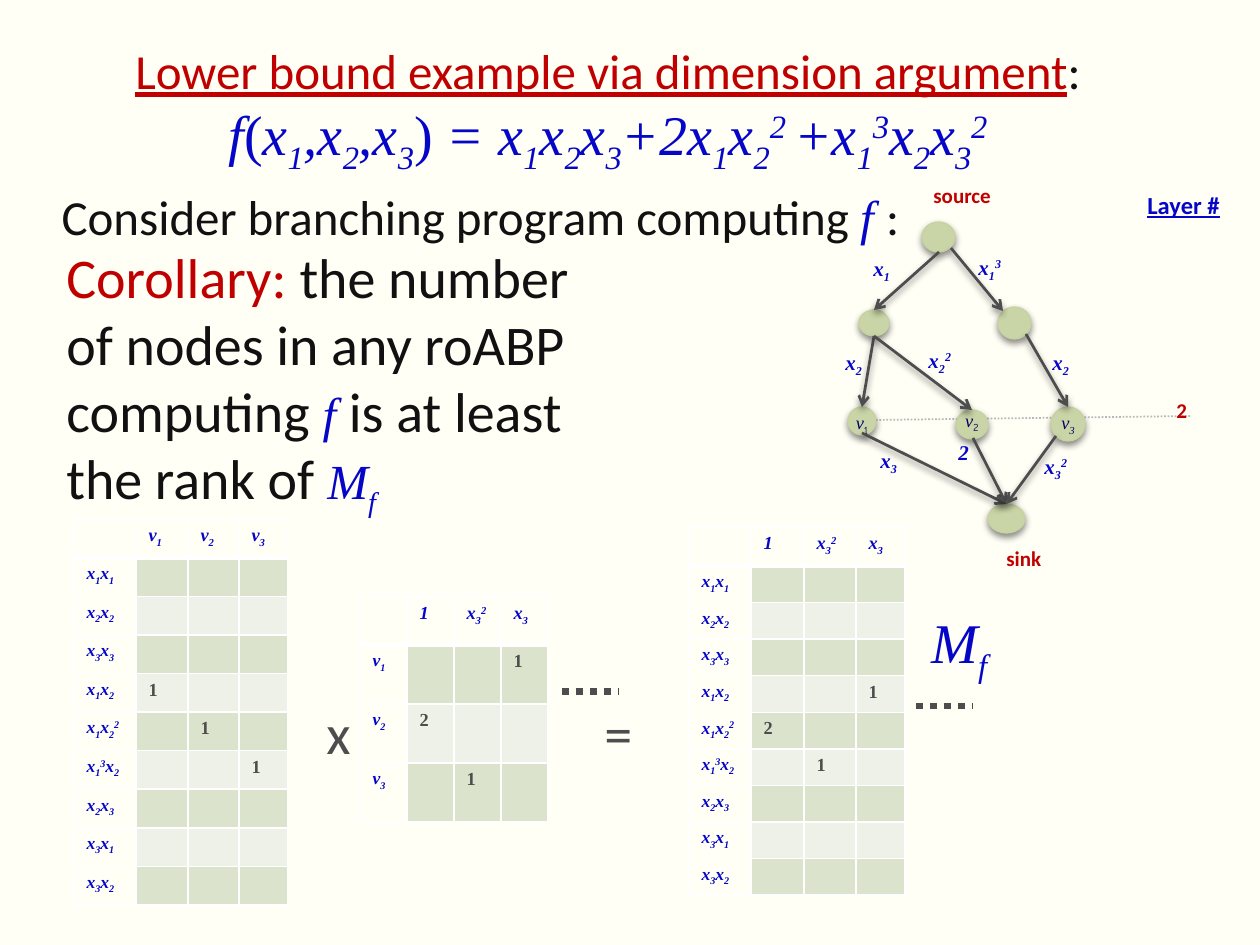
"""Build the slide on a lower bound for read-once branching programs."""
from dataclasses import dataclass, field
from itertools import groupby

from lxml.etree import SubElement
from pptx import Presentation
from pptx.dml.color import RGBColor
from pptx.enum.dml import MSO_LINE
from pptx.enum.shapes import MSO_CONNECTOR, MSO_SHAPE
from pptx.enum.text import MSO_ANCHOR, MSO_AUTO_SIZE, PP_ALIGN
from pptx.oxml.ns import qn
from pptx.util import Emu, Pt

SCALE = 914400 / 126
SERIF, SANS = "Times New Roman", "Calibri"
RED, BLUE, INK, GREY, NAVY = "C00000", "0606C8", "111111", "4D4D4D", "000066"


def px(length):
    return Emu(round(length * SCALE))


def style(name, size, color, **flags):
    return {"color": color, "format": {"name": name, "size": Pt(size), **flags}}


@dataclass
class Theme:
    background: str = "FFFFF6"
    node_fill: str = "C9D5A7"
    node_line: str = "C6D2A1"
    guide: str = "B8B8B8"
    border: str = "FFFFFF"
    bands: tuple = ("DBE3CD", "EEF1E8")
    styles: dict = field(default_factory=lambda: {
        "heading": style(SANS, 28, RED, underline=True),
        "body": style(SANS, 28, INK),
        "large": style(SANS, 32, INK),
        "large red": style(SANS, 32, RED),
        "operator": style(SANS, 32, GREY),
        "formula": style(SERIF, 32, BLUE, italic=True),
        "bracket": style(SERIF, 32, BLUE),
        "symbol": style(SERIF, 28, BLUE, italic=True),
        "end": style(SANS, 12, RED, bold=True),
        "layer": style(SANS, 14, BLUE, bold=True, underline=True),
        "weight": style(SERIF, 12, BLUE, bold=True, italic=True),
        "node": style(SERIF, 10.5, NAVY, italic=True),
        "node index": style("Comic Neue", 10.5, NAVY),
        "column": style(SERIF, 10.5, BLUE, bold=True, italic=True),
        "row": style(SERIF, 10, BLUE, bold=True, italic=True),
        "entry": style(SERIF, 10.5, GREY, bold=True),
    })


def split_scripts(markup):
    levels, level = {"_": -25000, "^": 30000}, 0
    letters = []
    for letter in markup:
        if letter in levels:
            level = levels[letter]
        else:
            letters.append((letter, level))
            level = 0
    for level, group in groupby(letters, key=lambda pair: pair[1]):
        yield "".join(letter for letter, _ in group), level


class SlideBuilder:
    def __init__(self, slide, theme):
        self.slide, self.theme = slide, theme
        slide.background.fill.solid()
        slide.background.fill.fore_color.rgb = RGBColor.from_string(theme.background)

    def add_runs(self, paragraph, pieces):
        for style_name, markup in pieces:
            look = self.theme.styles[style_name]
            for text, baseline in split_scripts(markup):
                run = paragraph.add_run()
                run.text = text
                for attribute, value in look["format"].items():
                    setattr(run.font, attribute, value)
                run.font.color.rgb = RGBColor.from_string(look["color"])
                if baseline:
                    run.font._element.set("baseline", str(baseline))

    def shadow(self, shape):
        effects = SubElement(shape._element.spPr, qn("a:effectLst"))
        outer = SubElement(effects, qn("a:outerShdw"), blurRad=str(Pt(4)), dist=str(Pt(2)),
                           dir="5400000", rotWithShape="0")
        black = SubElement(outer, qn("a:srgbClr"), val="000000")
        SubElement(black, qn("a:alpha"), val="45000")

    def body(self, box, paragraphs):
        holder = self.slide.placeholders[1]
        holder.left, holder.top, holder.width, holder.height = map(px, box)
        frame = holder.text_frame
        frame.auto_size, frame.vertical_anchor = MSO_AUTO_SIZE.NONE, MSO_ANCHOR.TOP
        for number, (align, pieces) in enumerate(paragraphs):
            paragraph = frame.add_paragraph() if number else frame.paragraphs[0]
            properties = paragraph._p.get_or_add_pPr()
            properties.set("marL", "0")
            properties.set("indent", "0")
            SubElement(properties, qn("a:buNone"))
            paragraph.alignment = align
            paragraph.space_before = Pt(6 if number else 0)
            self.add_runs(paragraph, pieces)

    def text(self, box, *pieces):
        frame = self.slide.shapes.add_textbox(*map(px, box)).text_frame
        frame.word_wrap, frame.auto_size = True, MSO_AUTO_SIZE.SHAPE_TO_FIT_TEXT
        self.add_runs(frame.paragraphs[0], pieces)

    def node(self, box, pieces=(), anchor=MSO_ANCHOR.MIDDLE, bottom=0):
        node = self.slide.shapes.add_shape(MSO_SHAPE.OVAL, *map(px, box))
        node.fill.solid()
        node.fill.fore_color.rgb = RGBColor.from_string(self.theme.node_fill)
        node.line.color.rgb = RGBColor.from_string(self.theme.node_line)
        node.line.width = Pt(0.75)
        self.shadow(node)
        layout = {"margin_left": 0, "margin_right": 0, "margin_top": 0,
                  "margin_bottom": px(bottom), "vertical_anchor": anchor, "word_wrap": False}
        for attribute, value in layout.items():
            setattr(node.text_frame, attribute, value)
        label = node.text_frame.paragraphs[0]
        label.alignment = PP_ALIGN.CENTER
        self.add_runs(label, pieces)
        return node

    def line(self, start, end, color, width, dash=None):
        line = self.slide.shapes.add_connector(MSO_CONNECTOR.STRAIGHT, *map(px, start + end))
        line.line.color.rgb = RGBColor.from_string(color)
        line.line.width = Pt(width)
        if dash:
            line.line.dash_style = dash
            SubElement(line._element.spPr, qn("a:effectLst"))
        return line

    def arrow(self, head, tail):
        arrow = self.line(head, tail, GREY, 1.57)
        SubElement(arrow.line._get_or_add_ln(), qn("a:headEnd"), type="arrow")
        self.shadow(arrow)
        return arrow

    def borders(self, cell, is_header):
        for side in "LRTB":
            width = 3 if is_header and side == "B" else 1
            edge = SubElement(cell._tc.get_or_add_tcPr(), qn(f"a:ln{side}"), w=str(Pt(width)))
            fill = SubElement(edge, qn("a:solidFill"))
            SubElement(fill, qn("a:srgbClr"), val=self.theme.border)

    def matrix(self, box, header, widths, columns, rows, entries):
        table = self.slide.shapes.add_table(len(rows) + 1, len(columns) + 1, *map(px, box)).table
        table.first_row = table.horz_banding = False
        for column, width in zip(table.columns, widths):
            column.width = px(width)
        for number, row in enumerate(table.rows):
            row.height = px((box[3] - header) / len(rows) if number else header)
            for place, cell in enumerate(row.cells):
                self.borders(cell, number == 0)
                if number and place:
                    cell.fill.solid()
                    band = self.theme.bands[(number - 1) % 2]
                    cell.fill.fore_color.rgb = RGBColor.from_string(band)
                    look, value = "entry", entries.get((rows[number - 1], columns[place - 1]), "")
                else:
                    cell.fill.background()
                    look, value = ("row", rows[number - 1]) if number else ("column", ("", *columns)[place])
                paragraph = cell.text_frame.paragraphs[0]
                self.add_runs(paragraph, [(look, value)])
                if not value:
                    SubElement(paragraph._p, qn("a:endParaRPr"), sz="1000")


def main():
    deck = Presentation()
    deck.slide_width, deck.slide_height = px(1260), px(945)
    slide = deck.slides.add_slide(deck.slide_layouts[1])
    title = slide.shapes.title._element
    title.getparent().remove(title)
    builder = SlideBuilder(slide, Theme())

    builder.body((49, 34, 1118, 328), [
        (PP_ALIGN.CENTER, [
            ("heading", "Lower bound example via dimension argument"), ("body", ": "),
            ("formula", "f"), ("bracket", "("), ("formula", "x_1,x_2,x_3"), ("bracket", ")"),
            ("formula", " = x_1x_2x_3+2x_1x_2^2^ +x_1^3x_2x_3^2")]),
        (PP_ALIGN.LEFT, [("body", "Consider branching program computing "),
                         ("symbol", "f "), ("body", ":")]),
    ])

    builder.line((876, 420), (1191, 416), builder.theme.guide, 1, MSO_LINE.ROUND_DOT)
    builder.node((922, 222, 33, 30))
    left = builder.node((859, 310, 30, 26))
    builder.node((998, 307, 33, 32))
    v1 = builder.node((848, 407, 28, 28), [("node", "v"), ("node index", "_1")], MSO_ANCHOR.TOP)
    v2 = builder.node((956, 410, 32, 29), [("node", "v"), ("node index", "_2")], bottom=6)
    v3 = builder.node((1051, 407, 34, 34), [("node", "v_3")])
    sink = builder.node((988, 504, 37, 29))
    builder.arrow((1003, 311), (951, 248))
    for child, tail in ((left, (939, 252)), (v1, (874, 336)), (v2, (874, 336)),
                        (v3, (1026, 334)), (sink, (862, 433)), (sink, (973, 438)),
                        (sink, (1056, 436))):
        builder.arrow(tail, tail).begin_connect(child, 0)

    for x, y, weight in ((861, 249, "x_1"), (966, 248, "x_1^3"), (833, 343, "x_2"),
                         (916, 341, "x_2^2"), (1040, 343, "x_2"), (868, 441, "x_3"),
                         (946, 433, "2"), (1032, 447, "x_3^2")):
        builder.text((x, y, 57, 38), ("weight", weight))
    for x, y, look, label in ((921, 176, "end", "source"), (994, 539, "end", "sink"),
                              (1164, 391, "end", "2"), (1135, 184, "layer", "Layer #")):
        builder.text((x, y, 108, 38), (look, label))

    monomials = ("x_1x_1", "x_2x_2", "x_3x_3", "x_1x_2", "x_1x_2^2", "x_1^3x_2",
                 "x_2x_3", "x_3x_1", "x_3x_2")
    vertices, suffixes = ("v_1", "v_2", "v_3"), ("1", "x_3^2", "x_3")
    builder.matrix((689, 527, 216, 367), 39, (62, 53, 52, 49), suffixes, monomials,
                   {("x_1x_2", "x_3"): "1", ("x_1x_2^2", "1"): "2", ("x_1^3x_2", "x_3^2"): "1"})
    builder.matrix((74, 519, 214, 386), 39, (62, 52, 51, 49), vertices, monomials,
                   {("x_1x_2", "v_1"): "1", ("x_1x_2^2", "v_2"): "1", ("x_1^3x_2", "v_3"): "1"})
    builder.matrix((360, 597, 188, 225), 48, (47,) * 4, suffixes, vertices,
                   {("v_1", "x_3"): "1", ("v_2", "1"): "2", ("v_3", "x_3^2"): "1"})

    for x, sign in ((314, "x"), (592, "=")):
        builder.text((x, 692, 29, 81), ("operator", sign))
    builder.text((54, 236, 566, 285), ("large red", "Corollary: "),
                 ("large", "the number of nodes in any roABP computing "), ("symbol", "f"),
                 ("large", " is at least the rank of "), ("symbol", "M_f"))
    builder.text((919, 601, 88, 81), ("formula", "M_f"))
    for x, y in ((562, 692), (916, 706)):
        builder.line((x, y), (x + 57, y), GREY, 4, MSO_LINE.ROUND_DOT)
    deck.save("out.pptx")


if __name__ == "__main__":
    main()
